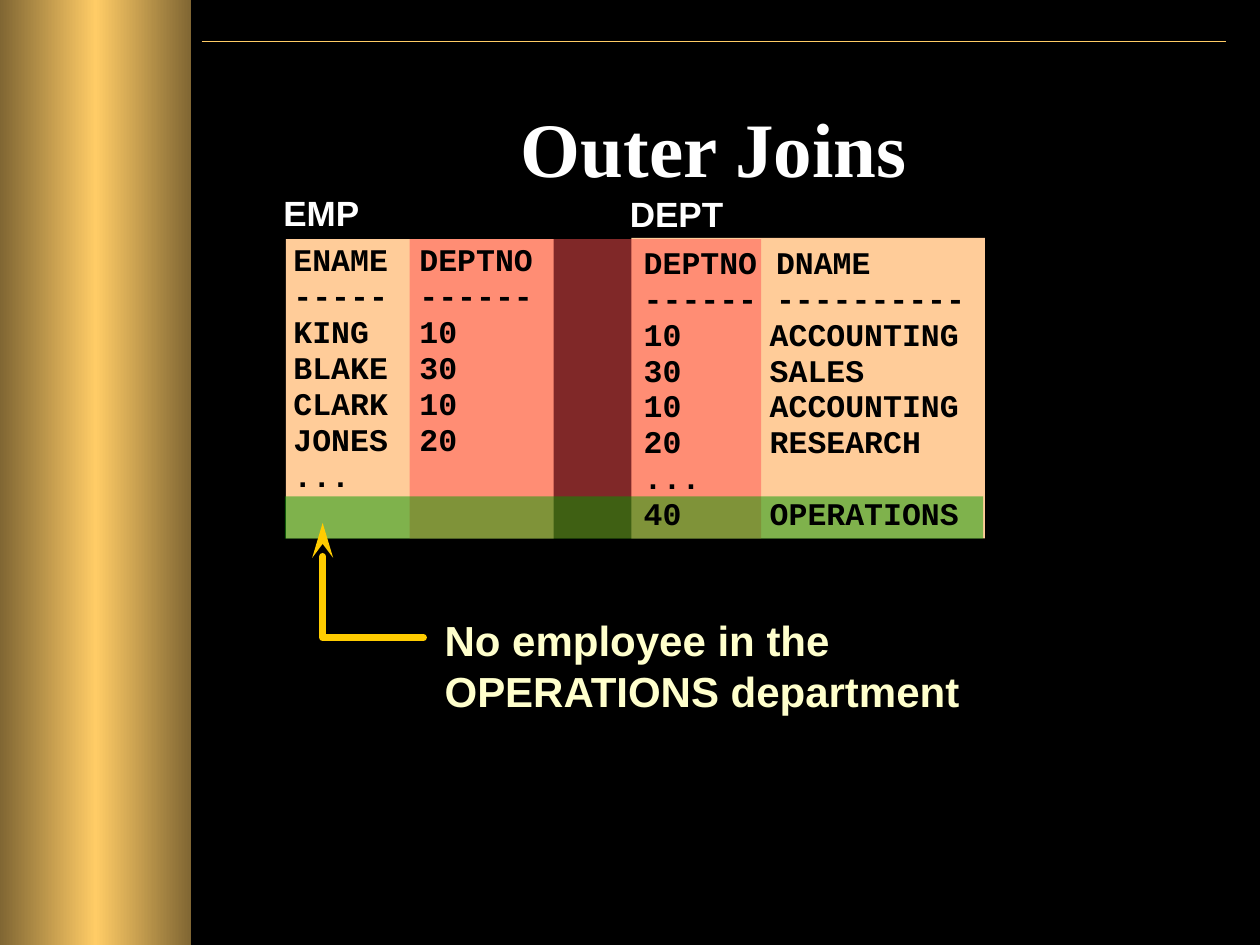
from copy import deepcopy

from lxml import etree
from pptx import Presentation
from pptx.dml.color import RGBColor
from pptx.enum import shapes, text
from pptx.oxml import ns
from pptx.util import Pt

COLORS = {
    "black": "000000", "white": "FFFFFF", "gold": "FFCC66", "bronze": "806633",
    "peach": "FFCC99", "red": "FF5050", "green": "009900",
    "arrow": "FFCC00", "cream": "FFFFCC",
}
TAB_STOPS = (72, 148.5, 193.5)
EMP_ROWS = ["ENAME\tDEPTNO", "-----\t------", "KING\t10", "BLAKE\t30",
            "CLARK\t10", "JONES\t20", "..."]
DEPT_ROWS = ["DEPTNO DNAME", "------ ----------", "10\tACCOUNTING", "30\tSALES",
             "10\tACCOUNTING", "20\tRESEARCH", "...", "40\tOPERATIONS"]


def rgb(name):
    return RGBColor.from_string(COLORS[name])


def sub(parent, tag, **attributes):
    return etree.SubElement(parent, ns.qn(tag), attributes)


def add_panel(page, box, color, alpha=None):
    """Add a borderless rectangle; alpha is its opacity in percent."""
    panel = page.shapes.add_shape(shapes.MSO_SHAPE.RECTANGLE, *map(Pt, box))
    panel.shadow.inherit = False
    panel.line.fill.background()
    panel.fill.solid()
    panel.fill.fore_color.rgb = rgb(color)
    if alpha is not None:
        fill_color = panel._element.spPr.find(ns.qn("a:solidFill"))[0]
        sub(fill_color, "a:alpha", val=str(alpha * 1000))
    return panel


def format_runs(para, font, size, color):
    for span in para.runs:
        span.font.name = font
        span.font.size = Pt(size)
        span.font.bold = True
        span.font.color.rgb = rgb(color)


def add_label(page, box, wording, size, color, wrap=True):
    label = page.shapes.add_textbox(*map(Pt, box))
    frame = label.text_frame
    frame.word_wrap = wrap
    para = frame.paragraphs[0]
    para.text = wording
    format_runs(para, "Arial", size, color)


def add_listing(page, box, rows):
    """Add monospaced rows whose columns are set by tab stops."""
    frame = page.shapes.add_textbox(*map(Pt, box)).text_frame
    frame.word_wrap = True
    frame.text = "\n".join(rows)
    for para in frame.paragraphs:
        para.line_spacing = 0.95
        format_runs(para, "Courier New", 18, "black")
        tabs = sub(para._p.get_or_add_pPr(), "a:tabLst")
        for stop in TAB_STOPS:
            sub(tabs, "a:tab", pos=str(Pt(stop)), algn="l")


def add_backdrop(page, width, height):
    page.background.fill.solid()
    page.background.fill.fore_color.rgb = rgb("black")

    rule = page.shapes.add_connector(
        shapes.MSO_CONNECTOR.STRAIGHT, Pt(115.2), Pt(23.8), Pt(width - 19.5), Pt(23.8))
    rule.line.color.rgb = rgb("gold")
    rule.line.width = Pt(1)
    sub(rule._element.spPr, "a:effectLst")

    column = add_panel(page, (0, 0, 109.4, height), "gold")
    column.fill.gradient()
    column.fill.gradient_angle = 0
    stop_list = column._element.spPr.find(ns.qn("a:gradFill")).find(ns.qn("a:gsLst"))
    stop_list.insert(1, deepcopy(stop_list[0]))
    for stop, position, color in zip(
            column.fill.gradient_stops, (0, 0.5, 1), ("bronze", "gold", "bronze")):
        stop.position = position
        stop.color.rgb = rgb(color)


def fill_title(page, box, wording):
    title = page.shapes.title
    title.left, title.top, title.width, title.height = map(Pt, box)
    frame = title.text_frame
    frame.text = wording
    frame.vertical_anchor = text.MSO_ANCHOR.TOP
    frame.margin_top = Pt(9)
    para = frame.paragraphs[0]
    para.alignment = text.PP_ALIGN.CENTER
    format_runs(para, "Times New Roman", 44, "white")


def add_join(page, box):
    """Show both tables, the shared key columns and the unmatched row."""
    left, top, width, height = box
    dept_left = left + 198
    add_panel(page, (left + 0.6, top + 1.2, 153, height - 1.2), "peach")
    add_panel(page, (dept_left, top + 0.5, left + width - dept_left, height - 0.5), "peach")
    add_label(page, (left - 8, top - 29.5, 63.4, 31), "EMP", 20, "white", wrap=False)
    add_label(page, (dept_left - 8, top - 28.8, 73.4, 31), "DEPT", 20, "white")
    add_panel(page, (left + 71.3, top + 1.2, 200.9, height - 1.2), "red", 50)
    add_panel(page, (left, top + 148.3, width - 1, 24.2), "green", 50)
    add_listing(page, (left - 2.2, top, 156.2, 171.4), EMP_ROWS)
    add_listing(page, (dept_left, top + 1.4, 201.6, 171.4), DEPT_ROWS)


def add_callout(page, box, wording):
    """Place the wording at the lower right, with an elbow arrow to the top left."""
    left, top, width, height = box
    add_label(page, (left + 62.6, top + 49, width - 62.6, height - 49), wording, 24, "cream")
    elbow = top + 65.5
    builder = page.shapes.build_freeform(Pt(left + 57.6), Pt(elbow))
    builder.add_line_segments(
        [(Pt(left), Pt(elbow)), (Pt(left), Pt(top))], close=False)
    arrow = builder.convert_to_shape()
    arrow.shadow.inherit = False
    arrow.fill.background()
    arrow.line.color.rgb = rgb("arrow")
    arrow.line.width = Pt(4)
    line = arrow.line._get_or_add_ln()
    line.set("cap", "rnd")
    sub(line, "a:round")
    sub(line, "a:tailEnd", type="stealth", w="med", len="lg")


def main():
    width, height = 720, 540
    deck = Presentation()
    deck.slide_width, deck.slide_height = Pt(width), Pt(height)
    page = deck.slides.add_slide(deck.slide_layouts[5])
    add_backdrop(page, width, height)
    fill_title(page, (114.5, 48.2, 586.8, 90), "Outer Joins")
    add_join(page, (162.8, 135.4, 400, 172.3))
    add_callout(page, (184.4, 298.8, 429.8, 113.8),
                "No employee in the\vOPERATIONS department")
    deck.save("out.pptx")


if __name__ == "__main__":
    main()
